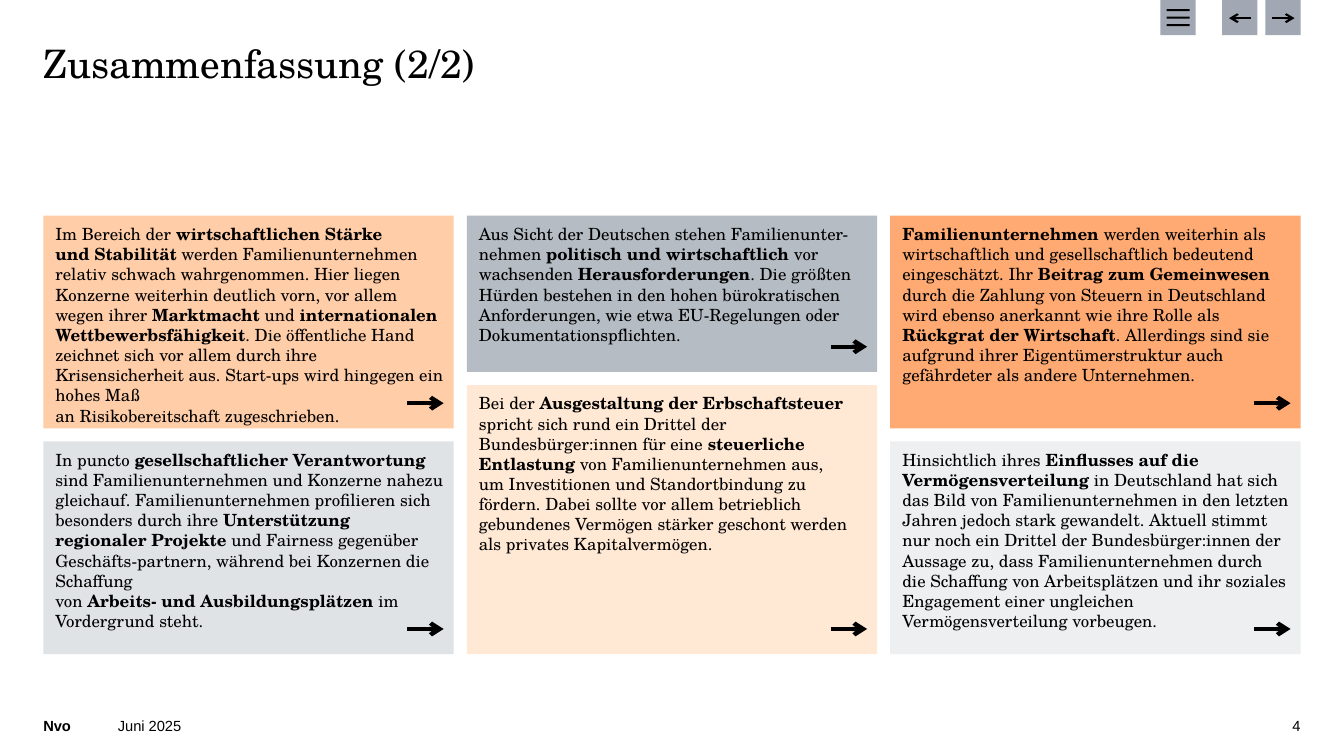
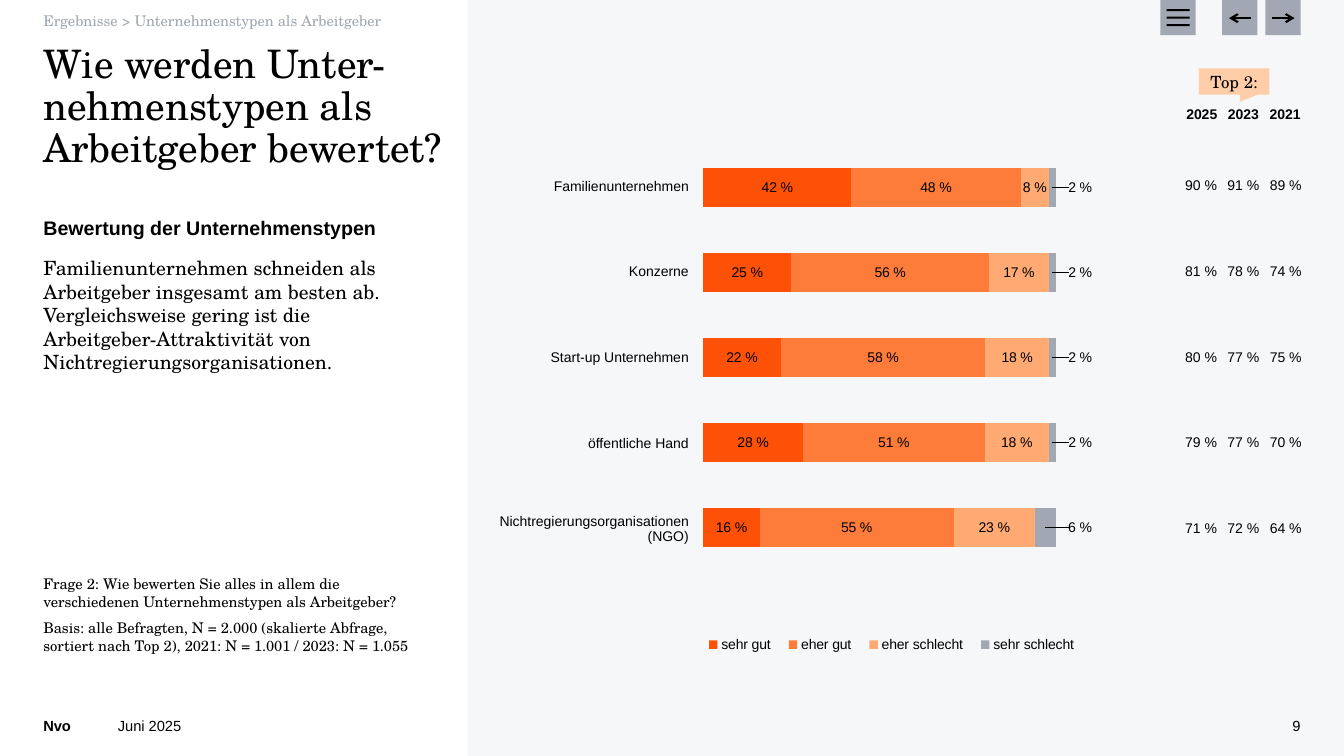
from lxml import etree
from pptx import Presentation
from pptx.chart.data import CategoryChartData
from pptx.dml.color import RGBColor
from pptx.enum.chart import XL_CHART_TYPE, XL_LABEL_POSITION, XL_LEGEND_POSITION
from pptx.enum.shapes import MSO_CONNECTOR, MSO_SHAPE
from pptx.enum.text import MSO_ANCHOR, MSO_AUTO_SIZE, PP_ALIGN
from pptx.oxml.ns import qn
from pptx.util import Inches, Pt

RECT, CALLOUT = MSO_SHAPE.RECTANGLE, MSO_SHAPE.RECTANGULAR_CALLOUT
STRAIGHT = MSO_CONNECTOR.STRAIGHT
TOP, MIDDLE, BOTTOM = MSO_ANCHOR.TOP, MSO_ANCHOR.MIDDLE, MSO_ANCHOR.BOTTOM
LEFT, CENTER, RIGHT = PP_ALIGN.LEFT, PP_ALIGN.CENTER, PP_ALIGN.RIGHT
FIXED = MSO_AUTO_SIZE.NONE
STACKED = XL_CHART_TYPE.BAR_STACKED_100
INSIDE, BELOW = XL_LABEL_POSITION.CENTER, XL_LEGEND_POSITION.BOTTOM


class Theme:
    black, gray, panel = "000000", "A1A8B3", "F5F7F8"
    red, orange, amber, peach, cream = "FD5108", "FE7C39", "FFAA72", "FFCDA8", "FFE8D4"
    steel, mist, pale = "B5BCC4", "DFE3E6", "EEEFF1"
    serif, sans = "TeX Gyre Schola", "Arial"
    title = dict(name=serif, size=Pt(28), bold=False)
    card = dict(name=serif, size=Pt(12), bold=False)
    head = dict(name=sans, size=Pt(14), bold=True)
    body = dict(name=serif, size=Pt(14), bold=False)
    note = dict(name=serif, size=Pt(10.5), bold=False)
    foot = dict(name=sans, size=Pt(10.5), bold=False)
    brand = dict(name=sans, size=Pt(10.5), bold=True)
    data = dict(name=sans, size=Pt(10), bold=False)
    year = dict(name=sans, size=Pt(10), bold=True)


W, H = 13.33, 7.5
EDGE, COL, GAP = 0.43, 4.07, 0.13
END = EDGE + 3 * COL + 2 * GAP
ROW, BASE, STEP = 2.14, 6.49, 0.85


def box(slide, fill, at, kind=RECT):
    shape = slide.shapes.add_shape(kind, *map(Inches, at))
    shape.shadow.inherit = False
    shape.fill.solid()
    shape.fill.fore_color.rgb = RGBColor.from_string(fill)
    shape.line.fill.background()
    return shape


def write(host, rows, align=LEFT, anchor=TOP, inset=(0, 0, 0, 0), gap=0, lead=None, color=Theme.black):
    frame = getattr(host, "text_frame", host)
    frame.word_wrap, frame.auto_size = True, FIXED
    host.vertical_anchor = anchor
    for side, size in zip(("left", "top", "right", "bottom"), inset):
        setattr(host, "margin_" + side, Inches(size))
    for i, (text, look) in enumerate(rows):
        para = frame.add_paragraph() if i else frame.paragraphs[0]
        props = para._p.get_or_add_pPr()
        props.set("marL", "0")
        props.set("indent", "0")
        etree.SubElement(props, qn("a:buNone"))
        for key, val in dict(alignment=align, space_before=Pt(gap if i else 0), line_spacing=lead).items():
            setattr(para, key, val)
        for j, part in enumerate(text.split("*")):
            for k, line in enumerate(part.split("\n")):
                if k:
                    para.add_line_break()
                if not line:
                    continue
                run = para.add_run()
                run.text = line
                for key, val in look.items():
                    setattr(run.font, key, val)
                run.font.color.rgb = RGBColor.from_string(color)
                if j % 2:
                    run.font.bold = True


deck = Presentation()
deck.slide_width, deck.slide_height = Inches(W), Inches(H)
first = deck.slides.add_slide(deck.slide_layouts[5])
second = deck.slides.add_slide(deck.slide_layouts[3])
arrows = []

cards = [
    (2.11, [
        (Theme.peach, "Im Bereich der *wirtschaftlichen Stärke\nund Stabilität* werden Familienunternehmen "
         "relativ schwach wahrgenommen. Hier liegen Konzerne weiterhin deutlich vorn, vor allem\n"
         "wegen ihrer *Marktmacht* und *internationalen Wettbewerbsfähigkeit*. Die öffentliche Hand "
         "zeichnet sich vor allem durch ihre Krisensicherheit aus. Start-ups wird hingegen "
         "ein hohes Maß\nan Risikobereitschaft zugeschrieben."),
        (Theme.mist, "In puncto *gesellschaftlicher Verantwortung* sind Familienunternehmen und Konzerne "
         "nahezu gleichauf. Familienunternehmen profilieren sich besonders durch ihre "
         "*Unterstützung regionaler Projekte* und Fairness gegenüber Geschäfts-partnern, während bei "
         "Konzernen die Schaffung\nvon *Arbeits- und Ausbildungsplätzen* im Vordergrund steht."),
    ]),
    (1.55, [
        (Theme.steel, "Aus Sicht der Deutschen stehen Familienunter-nehmen *politisch und wirtschaftlich* vor "
         "wachsenden *Herausforderungen*. Die größten Hürden bestehen in den hohen bürokratischen "
         "Anforderungen, wie etwa EU-Regelungen oder Dokumentationspflichten."),
        (Theme.cream, "Bei der *Ausgestaltung der Erbschaftsteuer* spricht sich rund ein Drittel der "
         "Bundesbürger:innen für eine *steuerliche Entlastung* von Familienunternehmen aus,\n"
         "um Investitionen und Standortbindung zu\nfördern. Dabei sollte vor allem betrieblich "
         "gebundenes Vermögen stärker geschont werden\nals privates Kapitalvermögen."),
    ]),
    (2.11, [
        (Theme.amber, "*Familienunternehmen* werden weiterhin als wirtschaftlich und gesellschaftlich bedeutend "
         "eingeschätzt. Ihr *Beitrag zum Gemeinwesen* durch die Zahlung von Steuern in Deutschland "
         "wird ebenso anerkannt wie ihre Rolle als *Rückgrat der Wirtschaft*. Allerdings sind sie "
         "aufgrund ihrer Eigentümerstruktur auch gefährdeter als andere Unternehmen."),
        (Theme.pale, "Hinsichtlich ihres *Einflusses auf die Vermögensverteilung* in Deutschland hat sich "
         "das Bild von Familienunternehmen in den letzten Jahren jedoch stark gewandelt. Aktuell stimmt\n"
         "nur noch ein Drittel der Bundesbürger:innen der Aussage zu, dass Familienunternehmen durch\n"
         "die Schaffung von Arbeitsplätzen und ihr soziales Engagement einer ungleichen\n"
         "Vermögensverteilung vorbeugen."),
    ]),
]
for col, (high, pair) in enumerate(cards):
    left = EDGE + col * (COL + GAP)
    low = ROW + high + GAP
    for (fill, text), top, end in zip(pair, (ROW, low), (ROW + high, BASE)):
        shape = box(first, fill, (left, top, COL, end - top))
        write(shape.text_frame, [(text, Theme.card)], inset=(0.12, 0.08, 0.08, 0.08))
        tip = left + COL - 0.1
        arrows.append((first, tip - 0.36, tip, end - 0.25, 3))

box(second, Theme.panel, (4.64, 0, W - 4.64, H))
holders = [
    (first.shapes.title, (EDGE, 0.44, END - EDGE, 0.98), [("Zusammenfassung (2/2)", Theme.title)], dict(lead=0.9)),
    (second.shapes.title, (EDGE, 0.44, COL, 0.98),
     [("Wie werden Unter-nehmenstypen als Arbeitgeber bewertet?", Theme.title)], dict(lead=0.9)),
    (second.placeholders[1], (EDGE, ROW, COL, 1.73),
     [("Bewertung der Unternehmenstypen", Theme.head),
      ("Familienunternehmen schneiden als Arbeitgeber insgesamt am besten ab. Vergleichsweise gering ist die\n"
       "Arbeitgeber-Attraktivität von Nichtregierungsorganisationen.", Theme.body)], dict(gap=12)),
    (second.placeholders[2], (EDGE, 4.35, COL, BASE - 4.35),
     [("Frage 2: Wie bewerten Sie alles in allem die\nverschiedenen Unternehmenstypen als Arbeitgeber?", Theme.note),
      ("Basis: alle Befragten, N = 2.000 (skalierte Abfrage,\n"
       "sortiert nach Top 2), 2021: N = 1.001 / 2023: N = 1.055", Theme.note)], dict(gap=6, anchor=BOTTOM)),
]
for shape, at, rows, fmt in holders:
    for key, val in zip(("left", "top", "width", "height"), at):
        setattr(shape, key, Inches(val))
    write(shape.text_frame, rows, **fmt)

crumb = second.shapes.add_textbox(*map(Inches, (EDGE, 0.08, COL, 0.28)))
write(crumb.text_frame, [("Ergebnisse > Unternehmenstypen als Arbeitgeber", Theme.note)],
      anchor=MIDDLE, lead=0.9, color=Theme.gray)

series = [
    ("sehr gut", Theme.red, (0.42, 0.25, 0.22, 0.28, 0.16)),
    ("eher gut", Theme.orange, (0.48, 0.56, 0.58, 0.51, 0.55)),
    ("eher schlecht", Theme.amber, (0.08, 0.17, 0.18, 0.18, 0.23)),
    ("sehr schlecht", Theme.gray, (0.02, 0.02, 0.02, 0.02, 0.06)),
]
mask = "0\\ %"
feed = CategoryChartData(number_format=mask)
feed.categories = ["1", "2", "3", "4", "5"]
for name, fill, vals in series:
    feed.add_series(name, vals)
chart = second.shapes.add_chart(STACKED, *map(Inches, (4.83, 1.16, 6.27, 5.37)), feed).chart
chart.has_title = False
chart.has_legend = True
chart.legend.position, chart.legend.include_in_layout = BELOW, False
chart.value_axis.has_major_gridlines = False
chart.category_axis.reverse_order = True
chart.value_axis.visible = chart.category_axis.visible = False
plot = chart.plots[0]
plot.gap_width, plot.overlap, plot.vary_by_categories = 120, 100, False
fonts = [chart.font, chart.legend.font]
for bar, (name, fill, vals) in zip(plot.series, series):
    bar.format.fill.solid()
    bar.format.fill.fore_color.rgb = RGBColor.from_string(fill)
    tags = bar.data_labels
    for key, val in dict(show_value=True, number_format=mask, number_format_is_linked=False,
                         position=INSIDE).items():
        setattr(tags, key, val)
    fonts.append(tags.font)

spots = [
    (chart._chartSpace.chart.plotArea, 0, dict(layoutTarget="inner", xMode="edge", yMode="edge",
                                               x=0.342, y=0.052, w=0.558, h=0.786)),
    (chart.legend._element, 1, dict(xMode="edge", yMode="edge", x=0.33, y=0.95, w=0.62, h=0.05)),
]
for i, shift in enumerate((0.044, 0.044, 0.044, 0.044, 0.055)):
    tag = plot.series[3].points[i].data_label
    tag.position = INSIDE
    fonts.append(tag.font)
    node = tag._dLbl
    form = etree.Element(qn("c:numFmt"), formatCode=mask, sourceLinked="0")
    node.insert(1, form)
    spots.append((node, 1, dict(x=shift, y=0)))
for font in fonts:
    for key, val in Theme.data.items():
        setattr(font, key, val)
    font.color.rgb = RGBColor.from_string(Theme.black)
for node, slot, vals in spots:
    for old in node.findall(qn("c:layout")):
        node.remove(old)
    layout = etree.Element(qn("c:layout"))
    manual = etree.SubElement(layout, qn("c:manualLayout"))
    for key, val in vals.items():
        etree.SubElement(manual, qn("c:" + key), val=str(val))
    node.insert(slot, layout)

names = ["Familienunternehmen", "Konzerne", "Start-up Unternehmen", "öffentliche Hand",
         "Nichtregierungsorganisationen (NGO)"]
shares = [(90, 91, 89), (81, 78, 74), (80, 77, 75), (79, 77, 70), (71, 72, 64)]
grids = [
    (11.65, 1.42, 1.26, STEP, [[f"{n} %" for n in row] for row in shares], Theme.data, 0),
    (11.66, 1, 1.24, 0.28, [["2025", "2023", "2021"]], Theme.year, 0),
    (4.83, 1.42, 2.01, STEP, [[name] for name in names], Theme.data, 0.01),
]
for left, top, wide, high, rows, look, pad in grids:
    at = map(Inches, (left, top, wide, high * len(rows)))
    table = second.shapes.add_table(len(rows), len(rows[0]), *at).table
    table.first_row = table.horz_banding = False
    table._tbl.tblPr.find(qn("a:tableStyleId")).text = "{2D5ABB26-0587-4C30-8999-92F81FD0307C}"
    for i, row in enumerate(rows):
        for j, text in enumerate(row):
            cell = table.cell(i, j)
            cell.fill.background()
            write(cell, [(text, look)], RIGHT, MIDDLE, (pad, pad, pad, 0))

badge = box(second, Theme.peach, (11.89, 0.68, 0.7, 0.26), CALLOUT)
badge.adjustments[0], badge.adjustments[1] = 0.08, 0.776
write(badge.text_frame, [("Top 2:", Theme.card)], CENTER, MIDDLE)

for slide, page in ((first, "4"), (second, "9")):
    for left, wide, text, look, align in (
        (EDGE, 0.47, "Nvo", Theme.brand, LEFT),
        (1.17, 9.64, "Juni 2025", Theme.foot, LEFT),
        (END - 0.33, 0.33, page, Theme.foot, RIGHT),
    ):
        foot = slide.shapes.add_textbox(*map(Inches, (left, 7.11, wide, 0.18)))
        write(foot.text_frame, [(text, look)], align, BOTTOM)
    for left in (11.51, 12.12, 12.55):
        box(slide, Theme.gray, (left, 0, 0.35, 0.35))
    for i in range(3):
        box(slide, Theme.black, (11.57, 0.09 + i * 0.075, 0.23, 0.02))
    arrows += [(slide, 12.62, 12.84, 0.18, 1.5), (slide, 12.41, 12.19, 0.18, 1.5)]

for slide, start, tip, y, thick in arrows:
    line = slide.shapes.add_connector(STRAIGHT, *map(Inches, (start, y, tip, y)))
    line.line.width = Pt(thick)
    line.line.color.rgb = RGBColor.from_string(Theme.black)
    etree.SubElement(line.line._get_or_add_ln(), qn("a:tailEnd"), type="arrow")
    etree.SubElement(line._element.spPr, qn("a:effectLst"))

deck.save("out.pptx")
